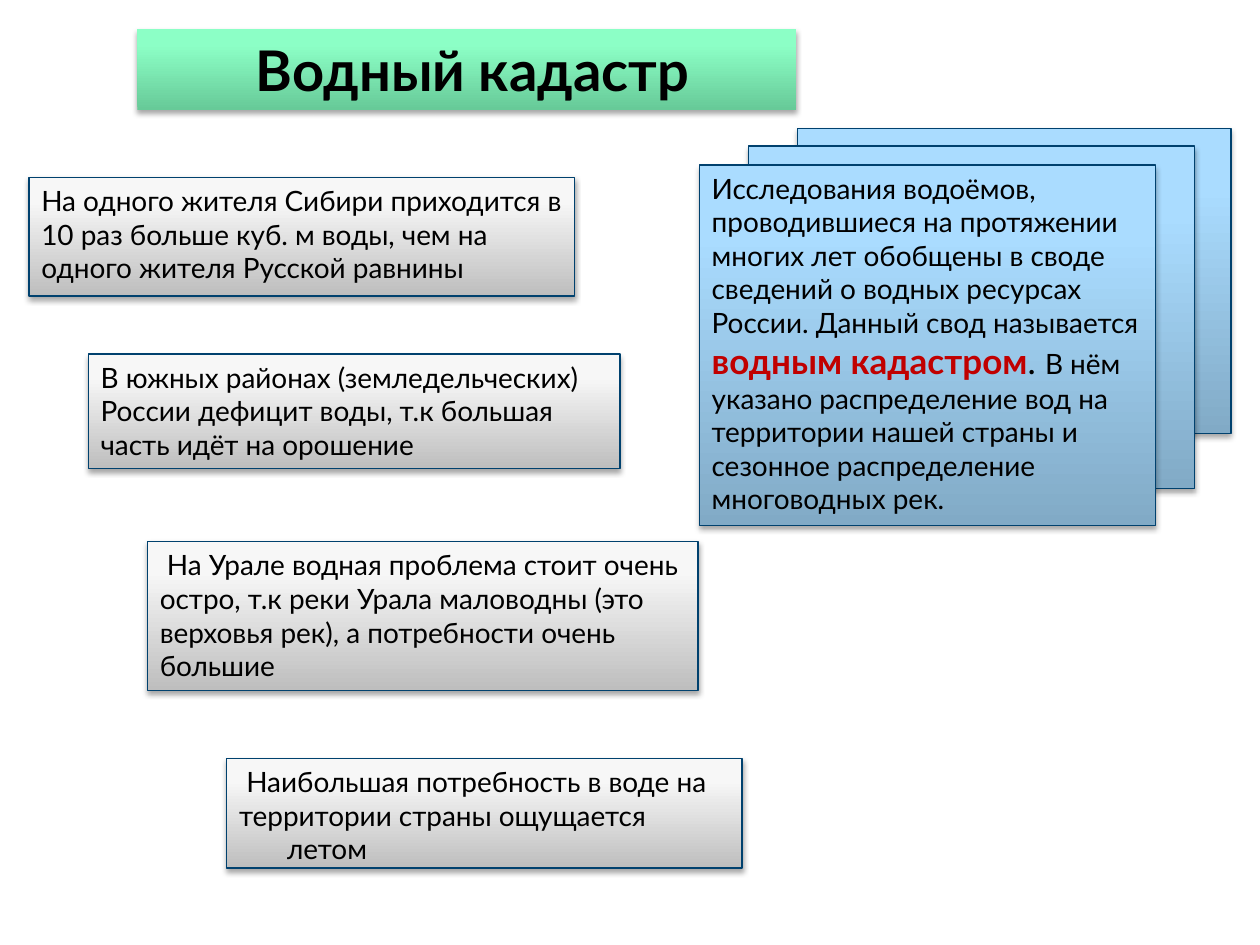
from copy import deepcopy
from dataclasses import dataclass

from lxml import etree
from pptx import Presentation
from pptx.dml.color import RGBColor
from pptx.enum import shapes, text
from pptx.oxml import ns
from pptx import util as u

BLACK = RGBColor(0x00, 0x00, 0x00)
RED = RGBColor(0xC0, 0x00, 0x00)
NAVY = RGBColor(0x00, 0x41, 0x6E)
GREEN = (RGBColor(0x67, 0xCA, 0x98), RGBColor(0x8C, 0xFF, 0xC6), RGBColor(0x8E, 0xFF, 0xC7))
BLUE = (RGBColor(0x81, 0xAA, 0xC6), RGBColor(0xAA, 0xDC, 0xFF), RGBColor(0xAC, 0xDD, 0xFF))
GREY = (RGBColor(0xBE, 0xBE, 0xBE), RGBColor(0xF7, 0xF7, 0xF7), RGBColor(0xF8, 0xF8, 0xF8))
STOPS = (0, 0.8, 1)

FONT = "Lato"
COLUMNS, ROWS = 100, 75
WIDTH, HEIGHT = u.Inches(10), u.Inches(7.5)
HANGING = u.Inches(0.38)


@dataclass(frozen=True)
class Area:
    column: float
    row: float
    columns: float
    rows: float


@dataclass(frozen=True)
class Fact:
    area: Area
    lines: tuple[str, ...]


TITLE = Area(10.9, 2.3, 52.3, 6.4)
SHEETS = (
    Area(63.3, 10.2, 34.4, 24.2),
    Area(59.4, 11.6, 35.4, 27.2),
    Area(55.5, 13.1, 36.2, 28.6),
)
FACTS = (
    Fact(Area(2.3, 14.1, 43.3, 9.4), (
        "На одного жителя Сибири приходится в",
        "10 раз больше куб. м воды, чем на",
        "одного жителя Русской равнины",
    )),
    Fact(Area(7, 28.1, 42.2, 9.1), (
        "В южных районах (земледельческих)",
        "России дефицит воды, т.к большая",
        "часть идёт на орошение",
    )),
    Fact(Area(11.7, 43, 43.7, 11.8), (
        " На Урале водная проблема стоит очень",
        "остро, т.к реки Урала маловодны (это",
        "верховья рек), а потребности очень",
        "большие",
    )),
    Fact(Area(18, 60.2, 40.9, 8.7), (
        " Наибольшая потребность в воде на",
        "территории страны ощущается летом",
    )),
)


def add_shadow(card) -> None:
    card.shadow.inherit = False
    effects = card._element.spPr.find(ns.qn("a:effectLst"))
    shadow = etree.SubElement(
        effects, ns.qn("a:outerShdw"), blurRad=str(u.Pt(3.1)), dist=str(u.Pt(1.8)),
        dir="5400000", rotWithShape="0",
    )
    color = etree.SubElement(shadow, ns.qn("a:srgbClr"), val=str(BLACK))
    etree.SubElement(color, ns.qn("a:alpha"), val="35000")


def add_card(parent, area: Area, colors: tuple[RGBColor, ...], outlined: bool = True):
    card = parent.add_shape(
        shapes.MSO_SHAPE.RECTANGLE,
        int(WIDTH * area.column / COLUMNS), int(HEIGHT * area.row / ROWS),
        int(WIDTH * area.columns / COLUMNS), int(HEIGHT * area.rows / ROWS),
    )
    card.fill.gradient()
    card.fill.gradient_angle = 90
    stop_list = card._element.spPr.find(ns.qn("a:gradFill")).find(ns.qn("a:gsLst"))
    stop_list.append(deepcopy(stop_list[-1]))
    for stop, position, color in zip(card.fill.gradient_stops, STOPS, colors):
        stop.position = position
        stop.color.rgb = color
    if outlined:
        card.line.color.rgb = NAVY
        card.line.width = u.Pt(0.75)
    else:
        card.line.fill.background()
    add_shadow(card)
    return card


def prepare_text(card):
    frame = card.text_frame
    frame.word_wrap = True
    frame.auto_size = text.MSO_AUTO_SIZE.SHAPE_TO_FIT_TEXT
    frame.vertical_anchor = text.MSO_ANCHOR.TOP
    frame.paragraphs[0].alignment = text.PP_ALIGN.LEFT
    return frame


def add_text(paragraph, content: str, *, size: float = 16,
             color: RGBColor = BLACK, bold: bool = False) -> None:
    run = paragraph.add_run()
    run.text = content
    run.font.name = FONT
    run.font.size = u.Pt(size)
    run.font.color.rgb = color
    run.font.bold = bold


def add_title(parent) -> None:
    heading = prepare_text(add_card(parent, TITLE, GREEN, outlined=False)).paragraphs[0]
    heading.alignment = text.PP_ALIGN.CENTER
    add_text(heading, " ", size=28, bold=True)
    add_text(heading, "Водный кадастр", size=32, bold=True)


def add_cadastre(parent) -> None:
    stack = parent.add_group_shape()
    sheets = [add_card(stack.shapes, area, BLUE) for area in SHEETS]
    definition = prepare_text(sheets[-1]).paragraphs[0]
    add_text(definition, "Исследования водоёмов, проводившиеся на протяжении многих лет "
                         "обобщены в своде сведений о водных ресурсах России. "
                         "Данный свод называется ")
    add_text(definition, "водным кадастром", size=20, color=RED, bold=True)
    add_text(definition, ". ", size=20)
    add_text(definition, "В нём указано распределение вод на территории нашей страны "
                         "и сезонное распределение многоводных рек.")


def add_fact(parent, fact: Fact) -> None:
    frame = prepare_text(add_card(parent, fact.area, GREY))
    for index, line in enumerate(fact.lines):
        paragraph = frame.add_paragraph() if index else frame.paragraphs[0]
        paragraph.alignment = text.PP_ALIGN.LEFT
        properties = paragraph._p.get_or_add_pPr()
        properties.set("marL", str(HANGING))
        properties.set("indent", str(-HANGING))
        add_text(paragraph, line)


def main() -> None:
    deck = Presentation()
    deck.slide_width, deck.slide_height = WIDTH, HEIGHT
    slide = deck.slides.add_slide(deck.slide_layouts[6])
    add_title(slide.shapes)
    add_cadastre(slide.shapes)
    for fact in FACTS:
        add_fact(slide.shapes, fact)
    deck.save("out.pptx")


if __name__ == "__main__":
    main()
